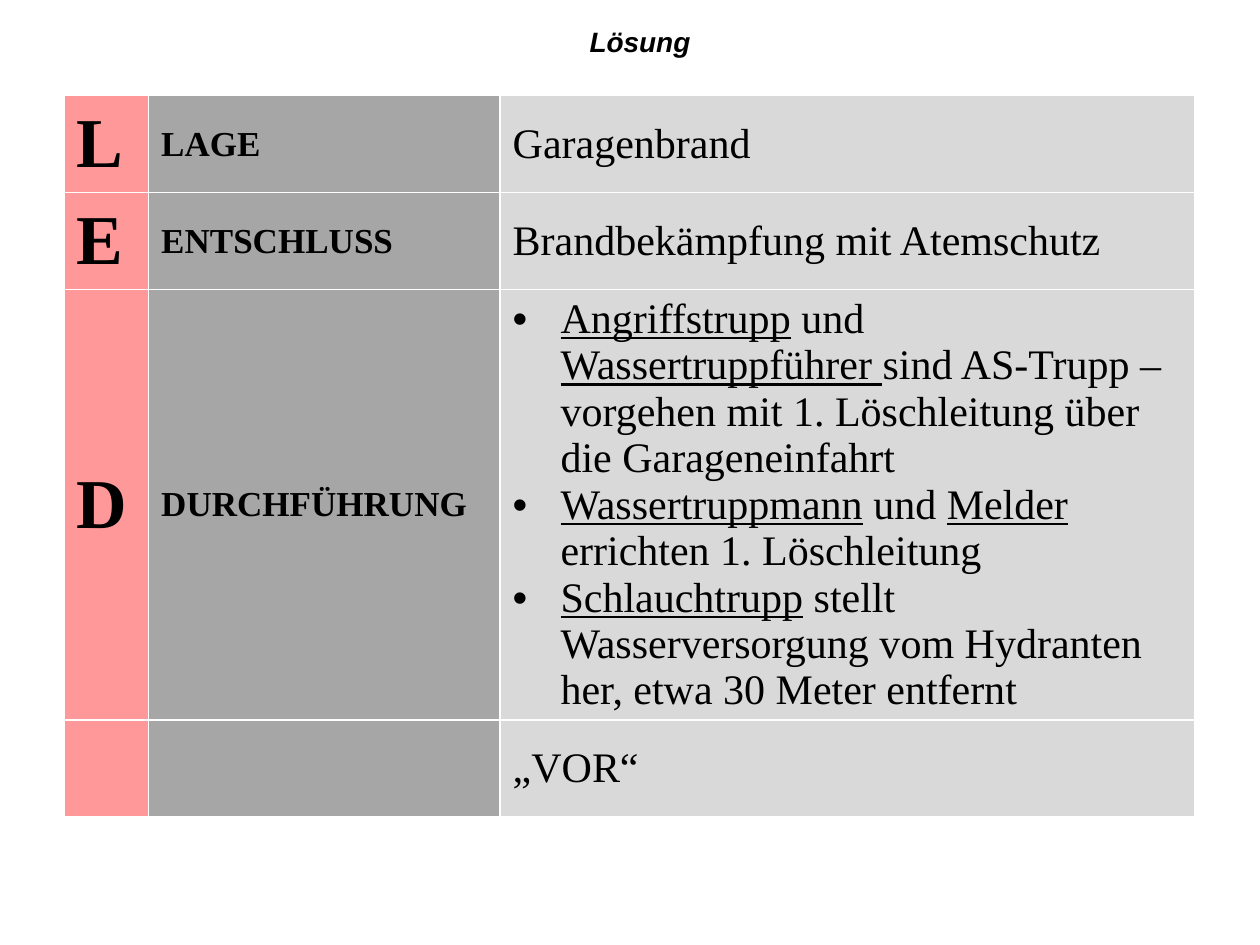
from dataclasses import dataclass

from lxml import etree
from pptx import Presentation
from pptx.dml.color import RGBColor
from pptx.enum import shapes, text
from pptx.oxml.ns import qn
from pptx.util import Inches, Pt


@dataclass(frozen=True)
class Theme:
    ink: str = "000000"
    paper: str = "FFFFFF"
    columns: tuple = ("FF9999", "A6A6A6", "D9D9D9")
    sizes: tuple = (40, 20, 24)
    bold: tuple = (True, True, False)
    title_size: int = 16
    title_font: str = "Arial"
    table_font: str = "Times New Roman"
    border: int = 1
    hanging: float = 0.38


THEME = Theme()
COLUMN_WIDTHS = (0.67, 2.79, 5.51)
ROW_HEIGHTS = (0.77, 0.77, 3.41, 0.77)

# Underscores enclose underlined words; a list becomes bullets.
ORDER = (
    ("L", "LAGE", "Garagenbrand"),
    ("E", "ENTSCHLUSS", "Brandbekämpfung mit Atemschutz"),
    ("D", "DURCHFÜHRUNG", [
        "_Angriffstrupp_ und _Wassertruppführer _sind AS-Trupp – "
        "vorgehen mit 1. Löschleitung über die Garageneinfahrt",
        "_Wassertruppmann_ und _Melder_ errichten 1. Löschleitung",
        "_Schlauchtrupp_ stellt Wasserversorgung vom Hydranten her, "
        "etwa 30 Meter entfernt",
    ]),
    ("", "", "„VOR“"),
)


def set_font(para, name, size, bold, italic=False):
    font = para.font
    font.name, font.size = name, Pt(size)
    font.bold, font.italic = bold, italic
    font.color.rgb = RGBColor.from_string(THEME.ink)


def add_title(page, words):
    box = page.shapes.add_shape(
        shapes.MSO_SHAPE.RECTANGLE,
        Inches(3.58), Inches(0.13), Inches(3), Inches(0.4))
    box.shadow.inherit = False
    box.fill.solid()
    box.fill.fore_color.rgb = RGBColor.from_string(THEME.paper)
    box.line.fill.background()
    para = box.text_frame.paragraphs[0]
    para.text = words
    para.alignment = text.PP_ALIGN.CENTER
    set_font(para, THEME.title_font, THEME.title_size, True, italic=True)


def add_borders(cell):
    properties = cell._tc.get_or_add_tcPr()
    for position, side in enumerate(("lnL", "lnR", "lnT", "lnB")):
        line = etree.Element(qn(f"a:{side}"), w=str(Pt(THEME.border)))
        fill = etree.SubElement(line, qn("a:solidFill"))
        etree.SubElement(fill, qn("a:srgbClr"), val=THEME.paper)
        properties.insert(position, line)


def add_bullet(para):
    properties = para._p.get_or_add_pPr()
    indent = Inches(THEME.hanging)
    properties.set("marL", str(indent))
    properties.set("indent", str(-indent))
    bullet = etree.Element(qn("a:buChar"), char="•")
    properties.insert(0, bullet)
    bullet.addprevious(etree.Element(qn("a:buFont"), typeface="Arial"))


def write_spans(para, marked):
    for number, words in enumerate(marked.split("_")):
        if words:
            span = para.add_run()
            span.text = words
            if number % 2:
                span.font.underline = True


def fill_cell(cell, content, column):
    cell.fill.solid()
    cell.fill.fore_color.rgb = RGBColor.from_string(THEME.columns[column])
    cell.vertical_anchor = text.MSO_ANCHOR.MIDDLE
    add_borders(cell)
    bulleted = isinstance(content, list)
    frame = cell.text_frame
    for number, marked in enumerate(content if bulleted else [content]):
        para = frame.add_paragraph() if number else frame.paragraphs[0]
        write_spans(para, marked)
        set_font(para, THEME.table_font, THEME.sizes[column],
                 THEME.bold[column])
        if bulleted:
            add_bullet(para)


def add_order_table(page):
    table = page.shapes.add_table(
        len(ORDER), len(COLUMN_WIDTHS), Inches(0.51), Inches(0.76),
        Inches(sum(COLUMN_WIDTHS)), Inches(sum(ROW_HEIGHTS))).table
    table.first_row = table.horz_banding = False
    for column, width in zip(table.columns, COLUMN_WIDTHS):
        column.width = Inches(width)
    for row, height in zip(table.rows, ROW_HEIGHTS):
        row.height = Inches(height)
    for row, contents in enumerate(ORDER):
        for column, content in enumerate(contents):
            fill_cell(table.cell(row, column), content, column)


def main():
    deck = Presentation()
    deck.slide_width, deck.slide_height = Inches(10), Inches(7.5)
    page = deck.slides.add_slide(deck.slide_layouts[6])
    add_title(page, "Lösung")
    add_order_table(page)
    deck.save("out.pptx")


if __name__ == "__main__":
    main()
